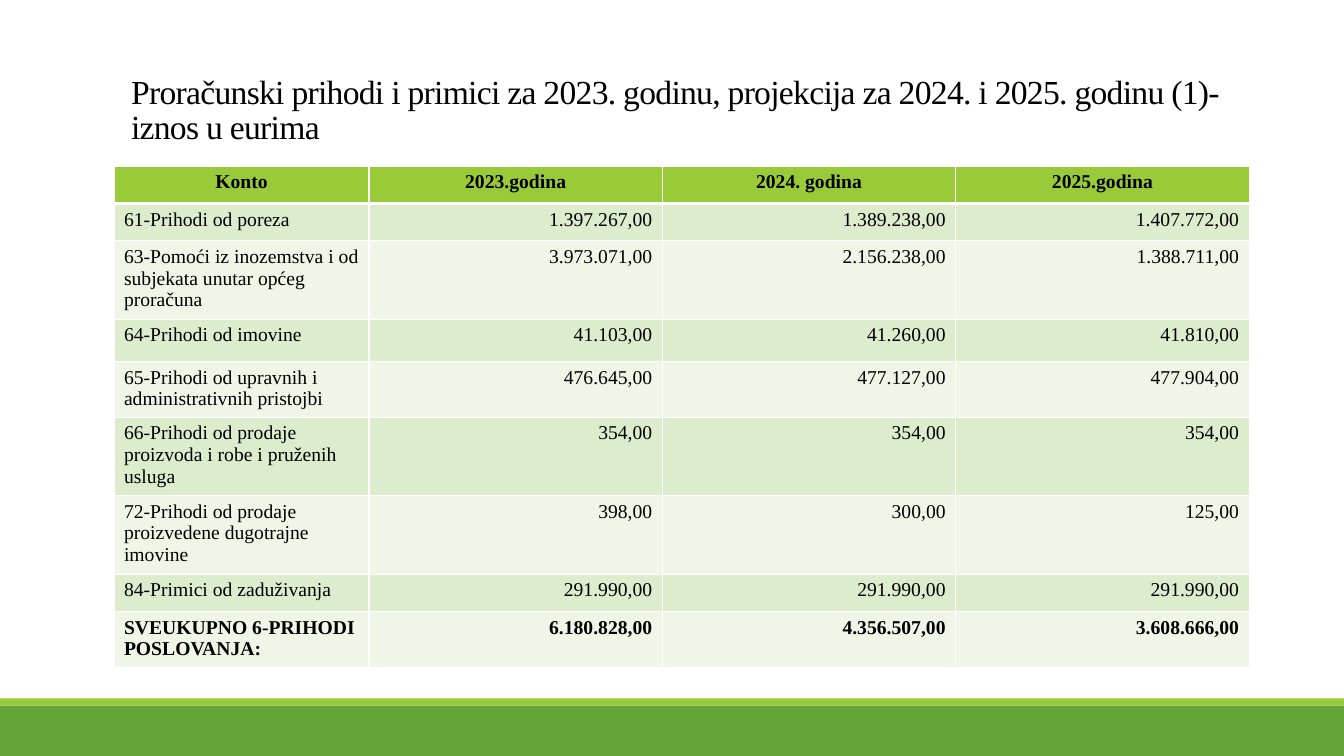
import pptx
import pptx.dml.color
import pptx.enum.shapes
import pptx.enum.text
import pptx.oxml
import pptx.oxml.ns
import pptx.util

Inches = pptx.util.Inches
RGBColor = pptx.dml.color.RGBColor
ALIGN = pptx.enum.text.PP_ALIGN

BLACK = RGBColor(0x00, 0x00, 0x00)
GREEN = RGBColor(0x63, 0xA5, 0x37)
LIME = RGBColor(0x99, 0xCB, 0x38)
PALE_GREEN = RGBColor(0xDE, 0xEC, 0xCE)
PALEST_GREEN = RGBColor(0xEF, 0xF6, 0xE8)
FONT = "Times New Roman"

COLUMN_WIDTHS = [2.53, 2.91, 2.91, 2.91]
ROW_HEIGHTS = [0.37, 0.37, 0.78, 0.42, 0.55, 0.78, 0.78, 0.37, 0.55]
BUDGET = [
    ("Konto", "2023.godina", "2024. godina", "2025.godina"),
    ("61-Prihodi od poreza", "1.397.267,00", "1.389.238,00", "1.407.772,00"),
    ("63-Pomoći iz inozemstva i od subjekata unutar općeg proračuna",
     "3.973.071,00", "2.156.238,00", "1.388.711,00"),
    ("64-Prihodi od imovine", "41.103,00", "41.260,00", "41.810,00"),
    ("65-Prihodi od upravnih i administrativnih pristojbi",
     "476.645,00", "477.127,00", "477.904,00"),
    ("66-Prihodi od prodaje proizvoda i robe i pruženih usluga",
     "354,00", "354,00", "354,00"),
    ("72-Prihodi od prodaje proizvedene dugotrajne imovine",
     "398,00", "300,00", "125,00"),
    ("84-Primici od zaduživanja", "291.990,00", "291.990,00", "291.990,00"),
    ("SVEUKUPNO 6-PRIHODI POSLOVANJA:",
     "6.180.828,00", "4.356.507,00", "3.608.666,00"),
]


def format_font(font, size, bold=False):
    settings = {"name": FONT, "size": pptx.util.Pt(size), "bold": bold}
    for attribute, value in settings.items():
        setattr(font, attribute, value)
    font.color.rgb = BLACK


def add_white_borders(cell, bottom_points):
    """Border lines must precede the fill, so call this before filling the cell."""
    widths = {"lnL": 1, "lnR": 1, "lnT": 1, "lnB": bottom_points}
    for side, points in widths.items():
        cell._tc.get_or_add_tcPr().append(pptx.oxml.parse_xml(
            f'<a:{side} {pptx.oxml.ns.nsdecls("a")} w="{pptx.util.Pt(points)}">'
            f'<a:solidFill><a:srgbClr val="FFFFFF"/></a:solidFill></a:{side}>'))


presentation = pptx.Presentation()
presentation.slide_width = Inches(13.33)
presentation.slide_height = Inches(7.5)
slide = presentation.slides.add_slide(presentation.slide_layouts[5])

# Footer bands
for top, height, color in [(7, 0.5, GREEN), (6.93, 0.07, LIME)]:
    band = slide.shapes.add_shape(
        pptx.enum.shapes.MSO_SHAPE.RECTANGLE,
        0, Inches(top), presentation.slide_width, Inches(height))
    band.shadow.inherit = False
    band.fill.solid()
    band.fill.fore_color.rgb = color
    band.line.fill.background()

# Title
title = slide.shapes.title
title_box = {"left": 1.2, "top": 0.31, "width": 11, "height": 1.19}
for attribute, inches in title_box.items():
    setattr(title, attribute, Inches(inches))
title.text_frame.text = (
    "Proračunski prihodi i primici za 2023. godinu, "
    "projekcija za 2024. i 2025. godinu (1)- iznos u eurima")
title.text_frame.word_wrap = True
title.text_frame.auto_size = pptx.enum.text.MSO_AUTO_SIZE.NONE
title.text_frame.vertical_anchor = pptx.enum.text.MSO_ANCHOR.BOTTOM
heading = title.text_frame.paragraphs[0]
heading.alignment = ALIGN.LEFT
heading.line_spacing = 0.85
format_font(heading.runs[0].font, 24)
heading.runs[0].font._element.set("spc", "-50")

# Budget table
budget_table = slide.shapes.add_table(
    len(BUDGET), len(COLUMN_WIDTHS), Inches(1.13), Inches(1.65),
    Inches(sum(COLUMN_WIDTHS)), Inches(sum(ROW_HEIGHTS))).table
for column, width in zip(budget_table.columns, COLUMN_WIDTHS):
    column.width = Inches(width)

last_row = len(BUDGET) - 1
for row, (entries, height) in enumerate(zip(BUDGET, ROW_HEIGHTS)):
    budget_table.rows[row].height = Inches(height)
    is_header = row == 0
    band_color = PALE_GREEN if row % 2 else PALEST_GREEN
    for col, entry in enumerate(entries):
        cell = budget_table.cell(row, col)
        add_white_borders(cell, 3 if is_header else 1)
        cell.fill.solid()
        cell.fill.fore_color.rgb = LIME if is_header else band_color
        cell.text = entry
        paragraph = cell.text_frame.paragraphs[0]
        body_alignment = ALIGN.RIGHT if col else ALIGN.LEFT
        paragraph.alignment = ALIGN.CENTER if is_header else body_alignment
        format_font(paragraph.runs[0].font, 14, bold=row in (0, last_row))

presentation.save("out.pptx")
